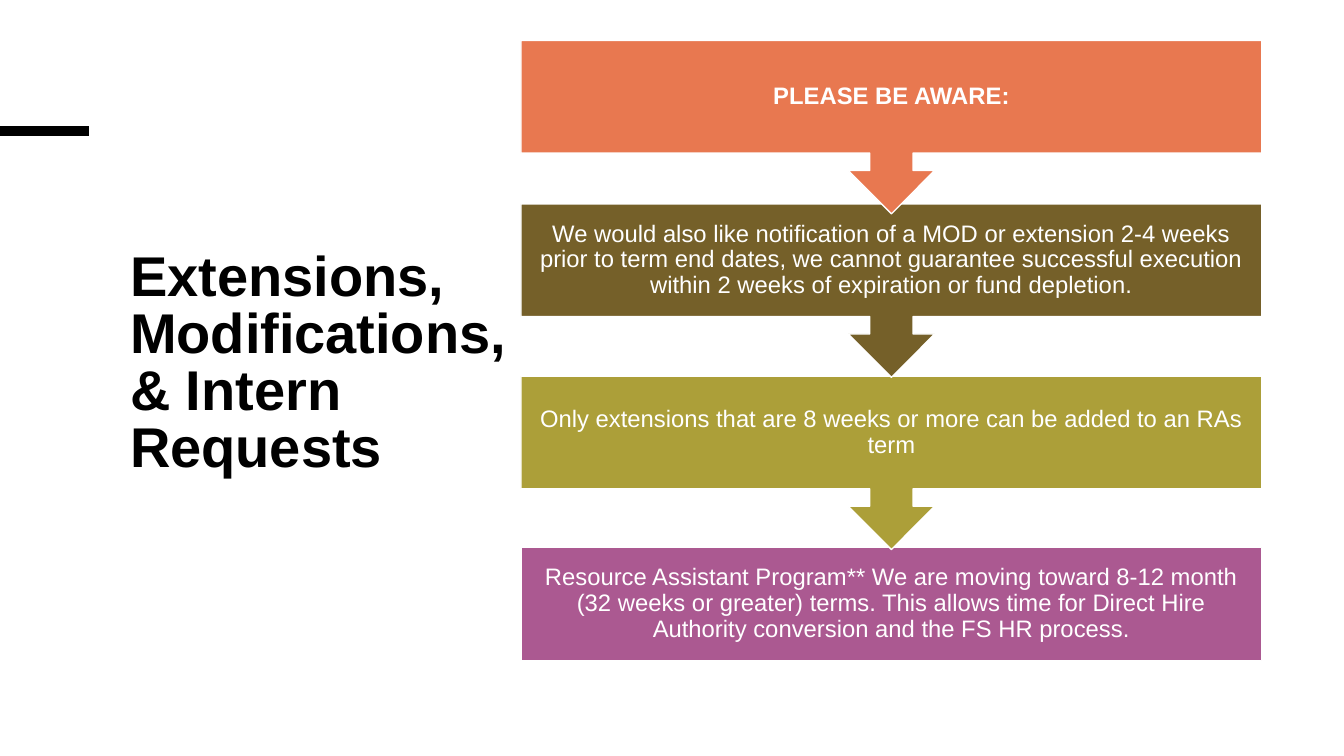
from lxml import etree
from pptx import Presentation
from pptx.dml.color import RGBColor
from pptx.enum.shapes import MSO_CONNECTOR, MSO_SHAPE
from pptx.enum.text import MSO_ANCHOR, PP_ALIGN
from pptx.oxml.ns import qn
from pptx.util import Cm, Pt

RECTANGLE = MSO_SHAPE.RECTANGLE
ARROW_CALLOUT = MSO_SHAPE.DOWN_ARROW_CALLOUT
STRAIGHT = MSO_CONNECTOR.STRAIGHT
TOP, MIDDLE = MSO_ANCHOR.TOP, MSO_ANCHOR.MIDDLE
LEFT, CENTER = PP_ALIGN.LEFT, PP_ALIGN.CENTER

FONT = "Arial"
BLACK, WHITE = "000000", "FFFFFF"
CALLOUT_HEIGHT, BOX_HEIGHT = 4.37, 2.84

# Offset from the top of the flow (cm), fill, wording, bold
STEPS = [
    (0, "E87850", "PLEASE BE AWARE:", True),
    (4.12, "756029",
     "We would also like notification of a MOD or extension 2-4 weeks prior to "
     "term end dates, we cannot guarantee successful execution within 2 weeks "
     "of expiration or fund depletion.", False),
    (8.46, "AC9F39",
     "Only extensions that are 8 weeks or more can be added to an RAs term", False),
    (12.78, "AB5991",
     "Resource Assistant Program** We are moving toward 8-12 month (32 weeks or "
     "greater) terms. This allows time for Direct Hire Authority conversion and "
     "the FS HR process.", False),
]


def color(hex_value):
    return RGBColor.from_string(hex_value)


def write(frame, text, size, hex_value, bold, align, anchor, spacing):
    frame.text = text
    frame.word_wrap = True
    frame.vertical_anchor = anchor
    paragraph = frame.paragraphs[0]
    paragraph.alignment = align
    paragraph.line_spacing = spacing
    font = paragraph.runs[0].font
    font.name, font.size, font.bold = FONT, Pt(size), bold
    font.color.rgb = color(hex_value)


def add_accent_bar(slide, left, top, width):
    bar = slide.shapes.add_connector(
        STRAIGHT, Cm(left), Cm(top), Cm(left + width), Cm(top))
    bar.line.color.rgb = color(BLACK)
    bar.line.width = Pt(6.75)
    etree.SubElement(bar._element.spPr, qn("a:effectLst"))


def add_title(slide, left, top, width, height):
    title = slide.shapes.add_textbox(Cm(left), Cm(top), Cm(width), Cm(height))
    write(title.text_frame, "Extensions, Modifications, & Intern Requests",
          40, BLACK, True, LEFT, TOP, 0.85)


def add_step(slide, left, top, width, height, kind, fill, text, bold):
    step = slide.shapes.add_shape(kind, Cm(left), Cm(top), Cm(width), Cm(height))
    step.shadow.inherit = False
    step.fill.solid()
    step.fill.fore_color.rgb = color(fill)
    step.line.color.rgb = color(WHITE)
    step.line.width = Pt(1)
    frame = step.text_frame
    frame.margin_left = frame.margin_right = Cm(0.33)
    frame.margin_top = frame.margin_bottom = Cm(0.33)
    write(frame, text, 17, WHITE, bold, CENTER, MIDDLE, 0.9)


def add_flow(slide, left, top, width):
    # Drawn from the bottom up so that each arrow tip lies over the next box
    for step in reversed(STEPS):
        offset, fill, text, bold = step
        is_last = step is STEPS[-1]
        kind = RECTANGLE if is_last else ARROW_CALLOUT
        height = BOX_HEIGHT if is_last else CALLOUT_HEIGHT
        add_step(slide, left, top + offset, width, height, kind, fill, text, bold)


def main():
    deck = Presentation()
    deck.slide_width, deck.slide_height = Cm(33.87), Cm(19.05)
    slide = deck.slides.add_slide(deck.slide_layouts[6])
    add_accent_bar(slide, 0, 3.3, 2.25)
    add_title(slide, 3.03, 6.2, 10.57, 9.32)
    add_flow(slide, 13.13, 1.02, 18.67)
    deck.save("out.pptx")


if __name__ == "__main__":
    main()
